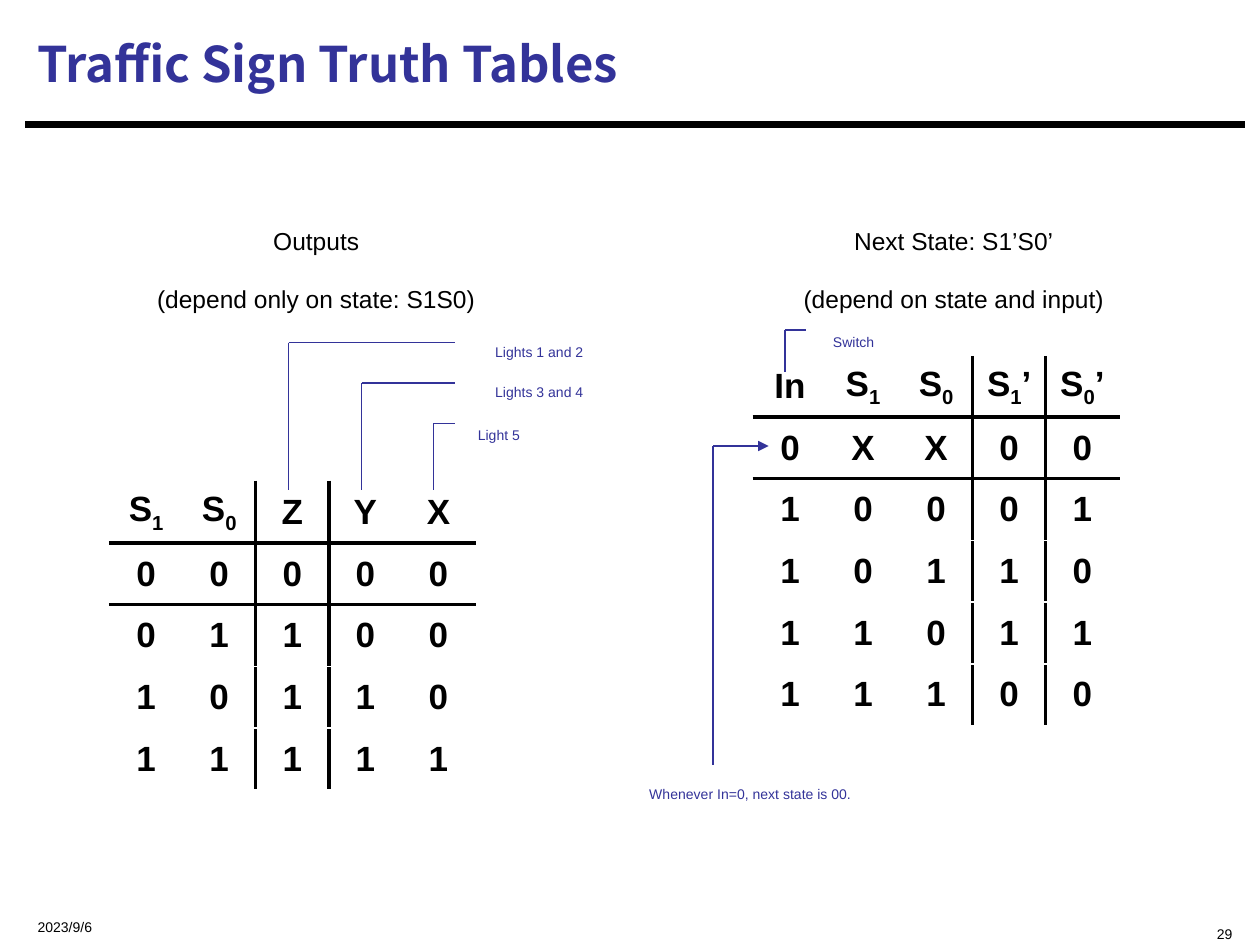
from dataclasses import dataclass

from lxml import etree
from pptx import Presentation
from pptx.dml.color import RGBColor
from pptx.enum import shapes, text
from pptx.oxml.ns import qn
from pptx.util import Inches, Pt


@dataclass(frozen=True)
class Theme:
    ink: str = "000000"
    accent: str = "333399"
    body_font: str = "Arial"
    title_font: str = "Noto Sans CJK SC"
    title_size: float = 28
    cell_size: float = 20
    heading_size: float = 14
    heading_gap: float = 16.5
    small_size: float = 8
    rule: float = 3.75
    grid: float = 2.25
    leader: float = 0.75


THEME = Theme()
LEFT, CENTER, RIGHT = text.PP_ALIGN.LEFT, text.PP_ALIGN.CENTER, text.PP_ALIGN.RIGHT
TOP, MIDDLE, BOTTOM = (text.MSO_ANCHOR.TOP, text.MSO_ANCHOR.MIDDLE,
                       text.MSO_ANCHOR.BOTTOM)

COLUMN = 0.58
ROW = 0.49
OUTPUT_ROWS = ["S_1 S_0 Z Y X", "0 0 0 0 0", "0 1 1 0 0", "1 0 1 1 0", "1 1 1 1 1"]
NEXT_STATE_ROWS = ["In S_1 S_0 S_1’ S_0’", "0 X X 0 0", "1 0 0 0 1",
                   "1 0 1 1 0", "1 1 0 1 1", "1 1 1 0 0"]


def style_font(font, size, color, name=THEME.body_font, bold=False):
    font.size = Pt(size)
    font.name = name
    font.bold = bold
    font.color.rgb = RGBColor.from_string(color)


def add_text(slide, area, lines, size, color=THEME.ink, align=LEFT, anchor=MIDDLE,
             top=0.05, bottom=0.05, gap=0, wrap=False, **font_options):
    """Add one paragraph per line, with a gap in points between paragraphs."""
    box = slide.shapes.add_textbox(*map(Inches, area))
    frame = box.text_frame
    frame.word_wrap = wrap
    frame.vertical_anchor = anchor
    frame.margin_top, frame.margin_bottom = Inches(top), Inches(bottom)
    frame.text = "\n".join(lines)
    for index, para in enumerate(frame.paragraphs):
        para.alignment = align
        para.space_before = Pt(gap if index else 0)
        for span in para.runs:
            style_font(span.font, size, color, **font_options)


def add_heading(slide, area, lines):
    add_text(slide, area, lines, THEME.heading_size, align=CENTER, anchor=TOP,
             top=0.29, gap=THEME.heading_gap)


def add_label(slide, left, top, width, label):
    add_text(slide, (left, top, width, 0.33), [label], THEME.small_size, THEME.accent,
             align=CENTER, anchor=BOTTOM, bottom=0.02)


def add_line(slide, start, end, color, width, arrow=False):
    line = slide.shapes.add_connector(shapes.MSO_CONNECTOR.STRAIGHT,
                                      *map(Inches, (*start, *end)))
    line.line.color.rgb = RGBColor.from_string(color)
    line.line.width = Pt(width)
    if arrow:
        etree.SubElement(line.line._get_or_add_ln(), qn("a:tailEnd"), type="triangle")
    etree.SubElement(line._element.spPr, qn("a:effectLst"))


def add_leader(slide, corner, side_x, end_y, arrow=False):
    """Draw two lines from a corner: one sideways, one down."""
    x, y = corner
    add_line(slide, corner, (side_x, y), THEME.accent, THEME.leader, arrow)
    add_line(slide, corner, (x, end_y), THEME.accent, THEME.leader)


def set_borders(cell, sides):
    """Draw the given sides, a subset of "LRTB" in that order."""
    properties = cell._tc.get_or_add_tcPr()
    for index, side in enumerate(sides):
        border = etree.Element(qn(f"a:ln{side}"), w=str(Pt(THEME.grid)))
        fill = etree.SubElement(border, qn("a:solidFill"))
        etree.SubElement(fill, qn("a:srgbClr"), val=THEME.ink)
        properties.insert(index, border)


def fill_cell(cell, content):
    """Write the content; the letter after each underscore is a subscript."""
    cell.fill.background()
    cell.vertical_anchor = MIDDLE
    para = cell.text_frame.paragraphs[0]
    para.alignment = CENTER
    first, *rest = content.split("_")
    pieces = [(first, False)]
    for part in rest:
        pieces += [(part[0], True), (part[1:], False)]
    for piece, subscript in pieces:
        if piece:
            span = para.add_run()
            span.text = piece
            style_font(span.font, THEME.cell_size, THEME.ink, bold=True)
            if subscript:
                span._r.get_or_add_rPr().set("baseline", "-25000")


def add_truth_table(slide, left, top, rows, input_count, header_height):
    """Rule off the header row and the input columns."""
    grid = [row.split() for row in rows]
    count = len(grid[0])
    height = header_height + ROW * (len(grid) - 1)
    table = slide.shapes.add_table(len(grid), count, Inches(left), Inches(top),
                                   Inches(COLUMN * count), Inches(height)).table
    table.first_row = table.horz_banding = False
    for column in table.columns:
        column.width = Inches(COLUMN)
    for r, values in enumerate(grid):
        table.rows[r].height = Inches(ROW if r else header_height)
        for c, value in enumerate(values):
            fill_cell(table.cell(r, c), value)
            drawn = {"L": c == input_count, "R": c == input_count - 1,
                     "T": r == 1, "B": r == 0}
            set_borders(table.cell(r, c), [side for side in drawn if drawn[side]])


def add_frame(slide):
    add_line(slide, (0.2, 0.99), (9.88, 0.99), THEME.ink, THEME.rule)
    add_text(slide, (0.2, 0.08, 9.67, 0.84), ["Traffic Sign Truth Tables"],
             THEME.title_size, THEME.accent, wrap=True,
             name=THEME.title_font, bold=True)
    add_text(slide, (0.2, 7.17, 2.5, 0.25), ["2023/9/6"], THEME.small_size,
             anchor=BOTTOM, bottom=0, wrap=True)
    add_text(slide, (6.88, 7.23, 3, 0.25), ["29"], THEME.small_size,
             align=RIGHT, anchor=BOTTOM, bottom=0, wrap=True)


def add_outputs(slide):
    add_heading(slide, (0.31, 1.5, 4.4, 0.9),
                ["Outputs", "(depend only on state: S1S0)"])
    add_truth_table(slide, 0.87, 3.82, OUTPUT_ROWS, 2, ROW)
    lights = [("Lights 1 and 2", 2.55, 1.42, (2.29, 2.72)),
              ("Lights 3 and 4", 2.87, 1.42, (2.87, 3.04)),
              ("Light 5", 3.21, 0.78, (3.44, 3.36))]
    for label, top, width, corner in lights:
        add_label(slide, 3.57, top, width, label)
        add_leader(slide, corner, 3.61, 3.89)


def add_next_state(slide):
    add_heading(slide, (5.43, 1.5, 4.28, 0.9),
                ["Next State: S1’S0’", "(depend on state and input)"])
    add_truth_table(slide, 5.98, 2.83, NEXT_STATE_ROWS, 3, 0.47)
    add_label(slide, 6.39, 2.47, 0.77, "Switch")
    add_leader(slide, (6.23, 2.62), 6.4, 2.95)
    add_label(slide, 4.46, 6.06, 2.99, "Whenever In=0, next state is 00.")
    add_leader(slide, (5.66, 3.54), 6.1, 6.07, arrow=True)


def main():
    deck = Presentation()
    deck.slide_width, deck.slide_height = Inches(10), Inches(7.5)
    page = deck.slides.add_slide(deck.slide_layouts[6])
    add_frame(page)
    add_outputs(page)
    add_next_state(page)
    deck.save("out.pptx")


if __name__ == "__main__":
    main()
